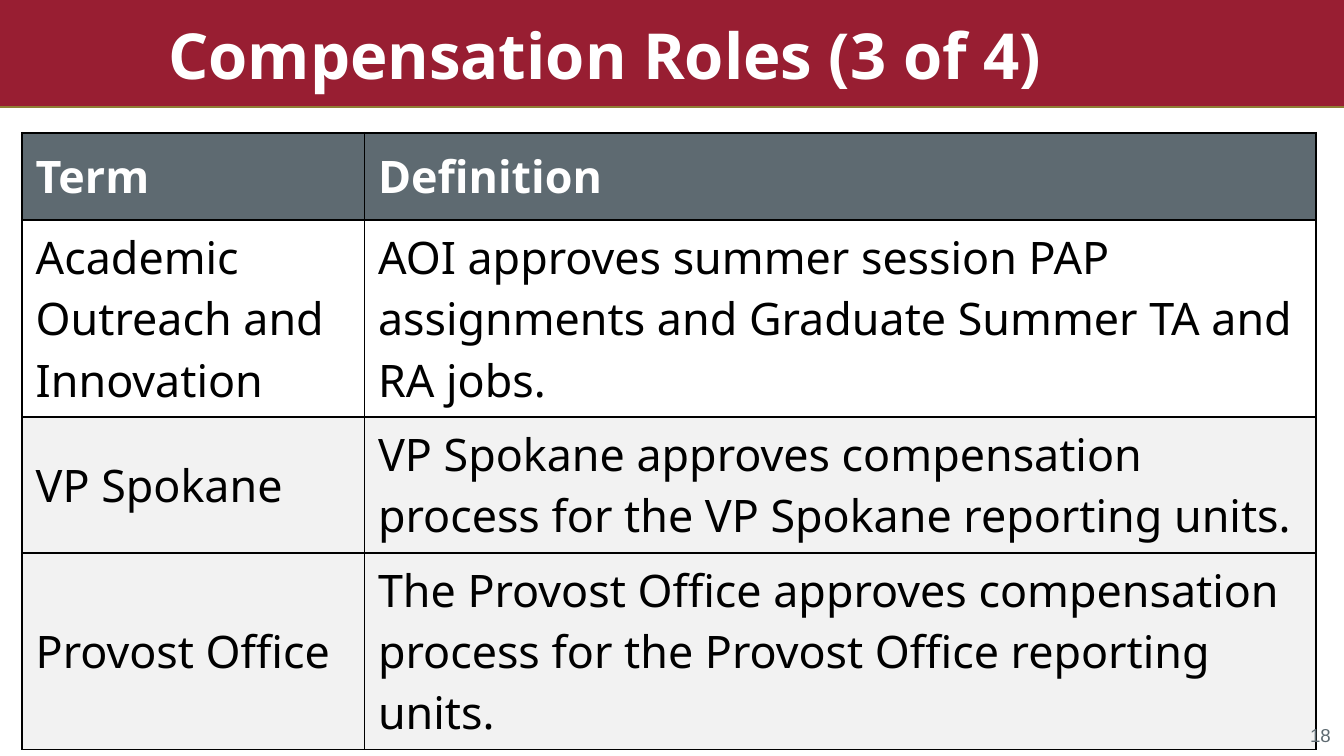
from lxml import etree
from pptx import Presentation
from pptx.dml.color import RGBColor
from pptx.enum import shapes, text
from pptx.oxml import ns
from pptx.util import Cm, Pt

CRIMSON = RGBColor(0x98, 0x1E, 0x32)
GOLD = RGBColor(0x8F, 0x7E, 0x35)
SLATE = RGBColor(0x5E, 0x6A, 0x71)
PALE = RGBColor(0xF2, 0xF2, 0xF2)
WHITE = RGBColor(0xFF, 0xFF, 0xFF)
BLACK = RGBColor(0, 0, 0)

PAGE_WIDTH, PAGE_HEIGHT = Cm(25.4), Cm(14.29)
BANNER_HEIGHT = Cm(2.03)
COLUMN_WIDTHS = [Cm(6.47), Cm(17.98)]
HEADER_HEIGHT, TWO_LINES, THREE_LINES = Cm(1.65), Cm(2.57), Cm(3.72)

ROWS = [
    (HEADER_HEIGHT, SLATE, ("Term", "Definition")),
    (THREE_LINES, WHITE, (
        "Academic Outreach and Innovation",
        "AOI approves summer session PAP assignments and Graduate Summer TA and RA jobs.")),
    (TWO_LINES, PALE, (
        "VP Spokane",
        "VP Spokane approves compensation process for the VP Spokane reporting units.")),
    (THREE_LINES, PALE, (
        "Provost Office",
        "The Provost Office approves compensation process for the Provost Office reporting units.")),
]


def add_span(para, words, size, color, bold=False, font="Noto Sans"):
    span = para.add_run()
    span.text = words
    span.font.name = font
    span.font.size = Pt(size)
    span.font.bold = bold
    span.font.color.rgb = color


def add_banner(page):
    """Add the crimson band and the gold rule under it."""
    band = page.shapes.add_shape(
        shapes.MSO_SHAPE.RECTANGLE, 0, 0, PAGE_WIDTH, BANNER_HEIGHT)
    band.shadow.inherit = False
    band.fill.solid()
    band.fill.fore_color.rgb = CRIMSON
    band.line.fill.background()
    rule = page.shapes.add_connector(
        shapes.MSO_CONNECTOR.STRAIGHT, 0, BANNER_HEIGHT, PAGE_WIDTH, BANNER_HEIGHT)
    rule.line.color.rgb = GOLD
    rule.line.width = Pt(1)
    etree.SubElement(rule._element.spPr, ns.qn("a:effectLst"))


def add_bottom_text(page, left, top, width, height):
    """Add a wrapping box with text at its bottom; return its text frame."""
    frame = page.shapes.add_textbox(left, top, width, height).text_frame
    frame.word_wrap = True
    frame.vertical_anchor = text.MSO_ANCHOR.BOTTOM
    return frame


def add_title(page, words):
    frame = add_bottom_text(page, Cm(1.91), Cm(0.32), Cm(23.01), Cm(1.57))
    frame.margin_left = frame.margin_right = Cm(1.27)
    para = frame.paragraphs[0]
    para.line_spacing = 0.9
    add_span(para, words, 34, WHITE, bold=True)


def add_page_number(page, number):
    frame = add_bottom_text(page, Cm(21.95), Cm(13.23), Cm(3.45), Cm(1))
    para = frame.paragraphs[0]
    para.alignment = text.PP_ALIGN.RIGHT
    add_span(para, number, 10, SLATE, font="Arial")


def set_borders(cell):
    properties = cell._tc.get_or_add_tcPr()
    for position, side in enumerate(("lnL", "lnR", "lnT", "lnB")):
        border = etree.Element(ns.qn(f"a:{side}"), w=str(Pt(1)))
        fill = etree.SubElement(border, ns.qn("a:solidFill"))
        etree.SubElement(fill, ns.qn("a:srgbClr"), val=str(BLACK))
        properties.insert(position, border)


def add_definitions(page):
    table = page.shapes.add_table(
        len(ROWS), len(COLUMN_WIDTHS), Cm(0.42), Cm(2.51),
        sum(COLUMN_WIDTHS), sum(height for height, _, _ in ROWS)).table
    for column, width in zip(table.columns, COLUMN_WIDTHS):
        column.width = width
    for index, (row, (height, fill, entries)) in enumerate(zip(table.rows, ROWS)):
        header = index == 0
        row.height = height
        for cell, words in zip(row.cells, entries):
            cell.vertical_anchor = text.MSO_ANCHOR.MIDDLE
            cell.fill.solid()
            cell.fill.fore_color.rgb = fill
            set_borders(cell)
            add_span(cell.text_frame.paragraphs[0], words, 24,
                     WHITE if header else BLACK, bold=header)


def main():
    deck = Presentation()
    deck.slide_width, deck.slide_height = PAGE_WIDTH, PAGE_HEIGHT
    page = deck.slides.add_slide(deck.slide_layouts[6])
    add_banner(page)
    add_title(page, "Compensation Roles (3 of 4)")
    add_definitions(page)
    add_page_number(page, "18")
    deck.save("out.pptx")


if __name__ == "__main__":
    main()
